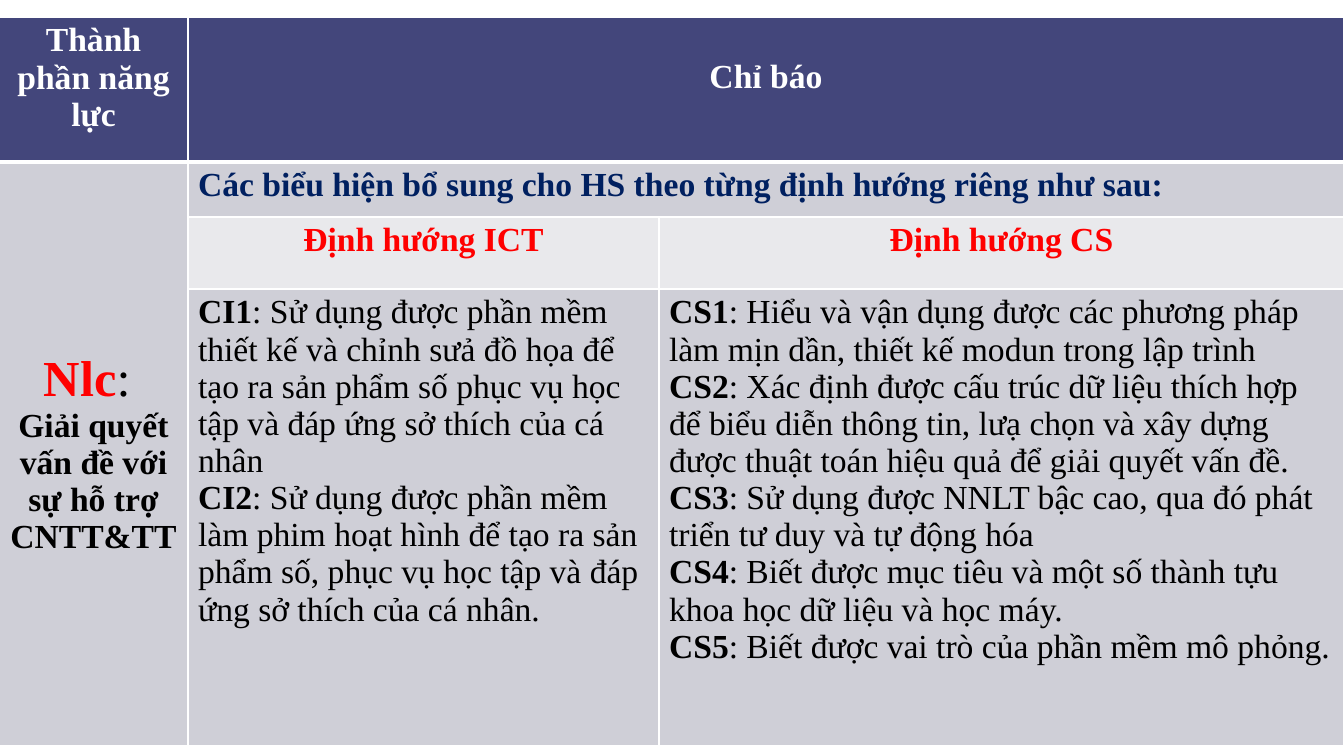
from lxml import etree
from pptx import Presentation
from pptx.dml.color import RGBColor
from pptx.enum.text import MSO_ANCHOR, PP_ALIGN
from pptx.oxml.ns import qn
from pptx.util import Emu, Pt

LEFT, CENTER = PP_ALIGN.LEFT, PP_ALIGN.CENTER
TOP, MIDDLE = MSO_ANCHOR.TOP, MSO_ANCHOR.MIDDLE
FONT = "Times New Roman"
NAVY, GREY, PALE = "43467B", "CFCFD7", "E9E9EC"
WHITE, BLACK, RED, BLUE = "FFFFFF", "000000", "FF0000", "002060"
COLS = [189, 471, 685]
ROWS = [145, 55, 72, 457]
FILLS = [NAVY, GREY, PALE, GREY]
LINE = 37  # height of one line of 24 pt text

ICT = [
    ("CI1", "Sử dụng được phần mềm thiết kế và chỉnh sưả đồ họa để tạo ra "
            "sản phẩm số phục vụ học tập và đáp ứng sở thích của cá nhân"),
    ("CI2", "Sử dụng được phần mềm làm phim hoạt hình để tạo ra sản phẩm số, "
            "phục vụ học tập và đáp ứng sở thích của cá nhân."),
]
CS = [
    ("CS1", "Hiểu và vận dụng được các phương pháp làm mịn dần, "
            "thiết kế modun trong lập trình"),
    ("CS2", "Xác định được cấu trúc dữ liệu thích hợp để biểu diễn thông tin, "
            "lưạ chọn và xây dựng được thuật toán hiệu quả để giải quyết vấn đề."),
    ("CS3", "Sử dụng được NNLT bậc cao, qua đó phát triển tư duy và tự động hóa"),
    ("CS4", "Biết được mục tiêu và một số thành tựu khoa học dữ liệu và học máy."),
    ("CS5", "Biết được vai trò của phần mềm mô phỏng."),
]


def px(n):
    return Emu(round(n * 914400 / 100.8))


def color(code):
    return RGBColor.from_string(code)


def run(text, tint=BLACK, bold=True, size=24):
    return text, tint, bold, size


def write(cell, paras, align=LEFT, anchor=TOP):
    """Fill a cell with paragraphs, each a list of runs."""
    cell.vertical_anchor = anchor
    frame = cell.text_frame
    for i, runs in enumerate(paras):
        para = frame.add_paragraph() if i else frame.paragraphs[0]
        para.alignment = align
        for text, tint, bold, size in runs:
            part = para.add_run()
            part.text = text
            font = part.font
            font.name, font.size, font.bold = FONT, Pt(size), bold
            font.color.rgb = color(tint)


def border(cell, widths):
    """Draw white left, right, top and bottom lines of the given points."""
    props = cell._tc.get_or_add_tcPr()
    for side, width in zip("LRTB", widths):
        line = etree.SubElement(props, qn(f"a:ln{side}"), w=str(Pt(width)))
        fill = etree.SubElement(line, qn("a:solidFill"))
        etree.SubElement(fill, qn("a:srgbClr"), val=WHITE)


def make_grid(slide, left, top):
    frame = slide.shapes.add_table(len(ROWS), len(COLS), px(left), px(top),
                                   px(sum(COLS)), px(sum(ROWS)))
    grid = frame.table
    for col, width in zip(grid.columns, COLS):
        col.width = px(width)
    for row, height in zip(grid.rows, ROWS):
        row.height = px(height)
    for r in range(len(ROWS)):
        for c in range(len(COLS)):
            cell = grid.cell(r, c)
            border(cell, (1, 1, 3 if r == 1 else 1, 3 if r == 0 else 1))
            cell.fill.solid()
            cell.fill.fore_color.rgb = color(GREY if r and not c else FILLS[r])
    for r in (0, 1):
        grid.cell(r, 1).merge(grid.cell(r, 2))
    grid.cell(1, 0).merge(grid.cell(3, 0))
    return grid


def fill_head(grid):
    write(grid.cell(0, 0), [[run("Thành phần năng lực", WHITE)]], CENTER)
    title = grid.cell(0, 1)
    title.margin_top = px(5 + LINE)
    write(title, [[run("Chỉ báo", WHITE)]], CENTER)


def fill_body(grid):
    skill = [[run("Nlc", RED, size=36), run(": ", bold=False, size=36)],
             [run("Giải quyết vấn đề với sự hỗ trợ CNTT&TT")]]
    write(grid.cell(1, 0), skill, CENTER, MIDDLE)
    intro = "Các biểu hiện bổ sung cho HS theo từng định hướng riêng như sau:"
    write(grid.cell(1, 1), [[run(intro, BLUE)]])
    for c, (track, items) in enumerate([("ICT", ICT), ("CS", CS)], 1):
        write(grid.cell(2, c), [[run(f"Định hướng {track}", RED)]], CENTER)
        write(grid.cell(3, c), [[run(code), run(f": {text}", bold=False)]
                                for code, text in items])


def main():
    deck = Presentation()
    deck.slide_width, deck.slide_height = px(1344), px(756)
    slide = deck.slides.add_slide(deck.slide_layouts[6])
    grid = make_grid(slide, -1, 17)
    fill_head(grid)
    fill_body(grid)
    deck.save("out.pptx")


if __name__ == "__main__":
    main()
